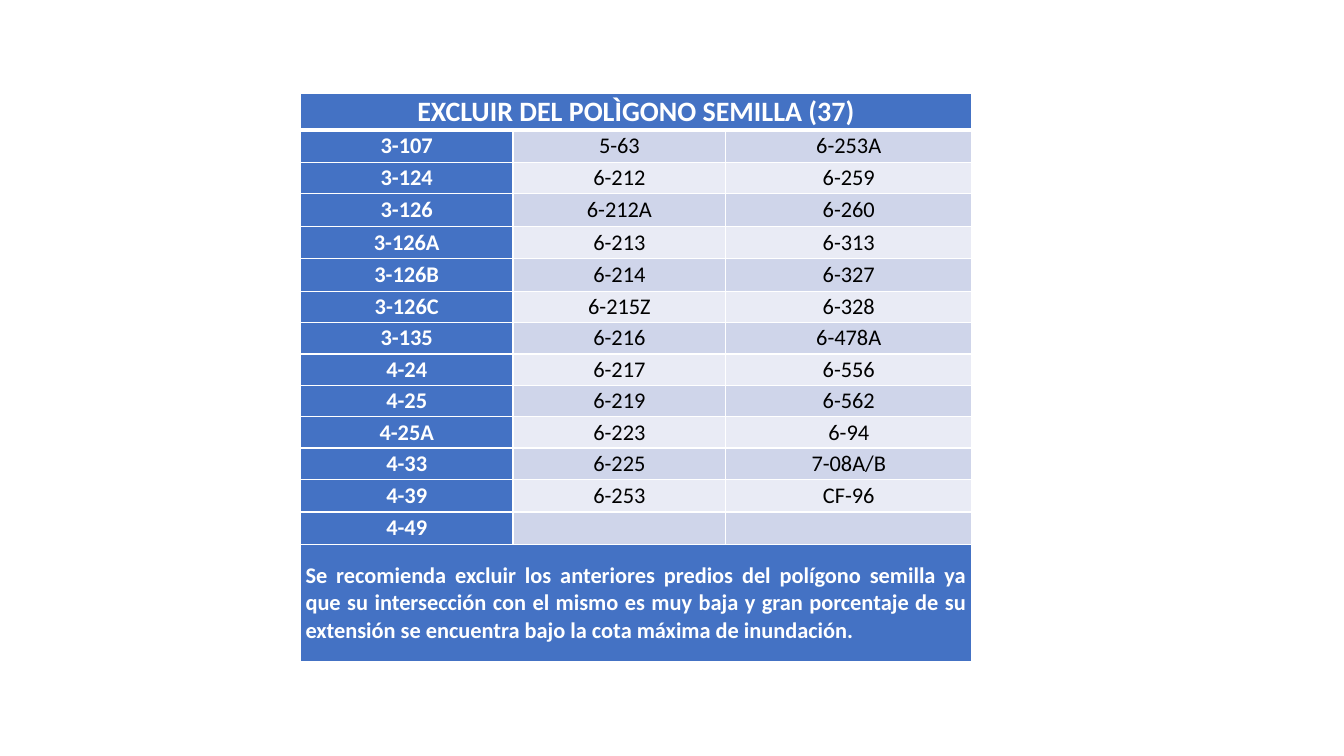
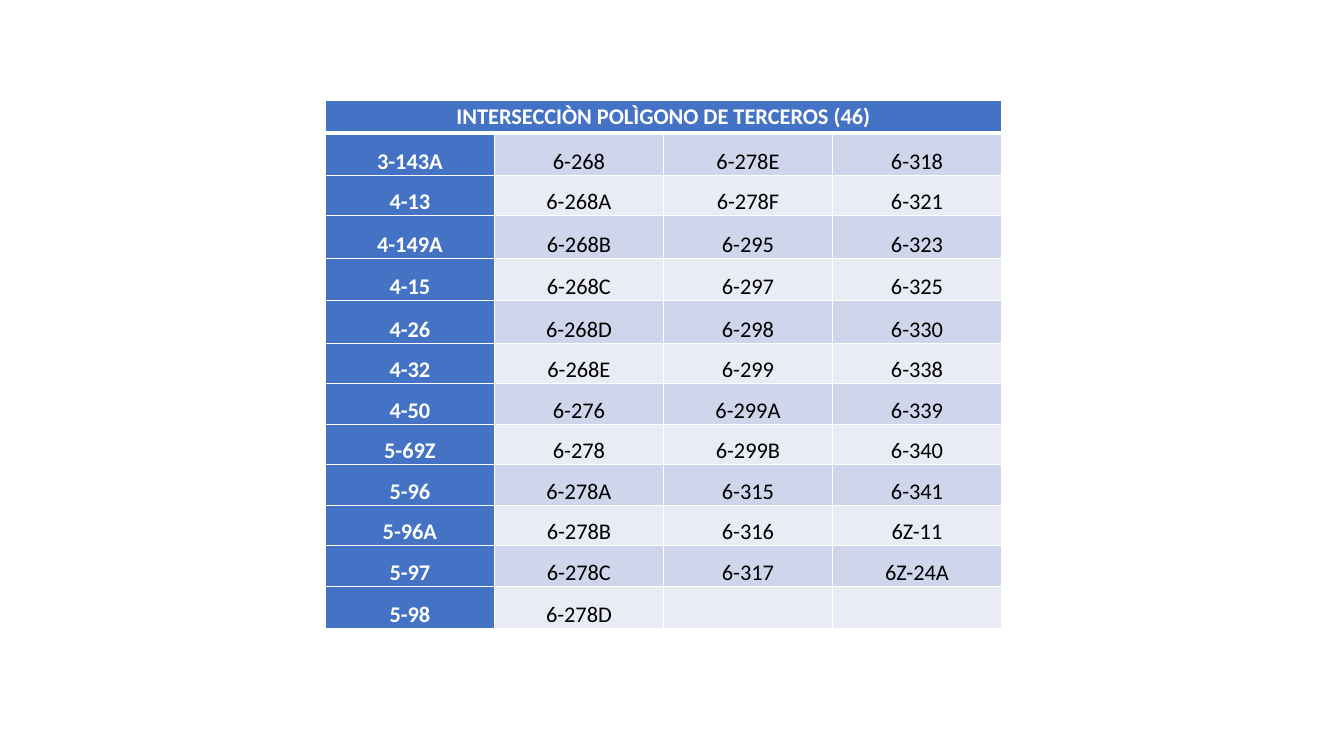
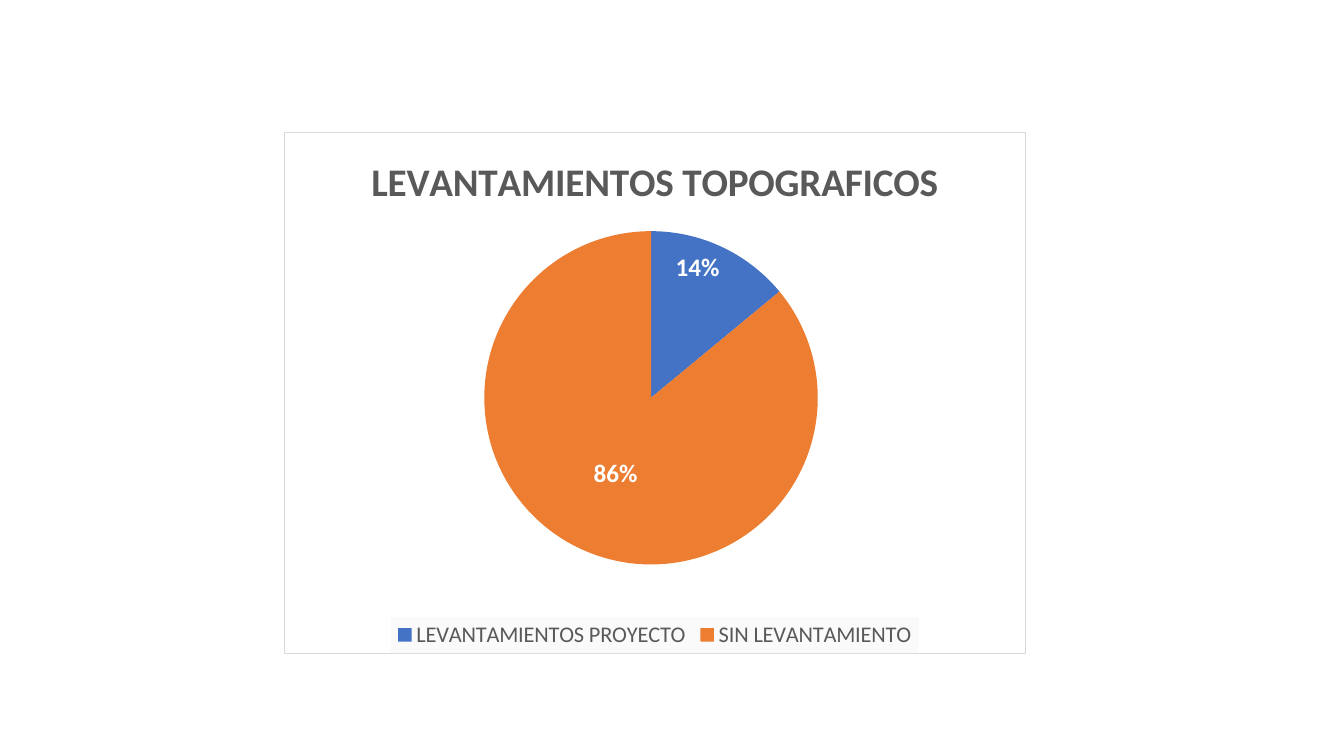
from pptx import Presentation
from pptx.chart.data import CategoryChartData
from pptx.dml.color import RGBColor
from pptx.enum.chart import XL_CHART_TYPE, XL_LABEL_POSITION, XL_LEGEND_POSITION
from pptx.enum.text import MSO_ANCHOR, PP_ALIGN
from pptx.oxml import parse_xml
from pptx.oxml.ns import nsdecls, qn
from pptx.util import Cm, Pt

PIE = XL_CHART_TYPE.PIE
INSIDE_END, LABEL_CENTER = XL_LABEL_POSITION.INSIDE_END, XL_LABEL_POSITION.CENTER
LEGEND_BOTTOM = XL_LEGEND_POSITION.BOTTOM
MIDDLE, BOTTOM = MSO_ANCHOR.MIDDLE, MSO_ANCHOR.BOTTOM
CENTER, JUSTIFY = PP_ALIGN.CENTER, PP_ALIGN.JUSTIFY

BLUE = RGBColor(0x44, 0x72, 0xC4)
ORANGE = RGBColor(0xED, 0x7D, 0x31)
BANDS = (RGBColor(0xCF, 0xD5, 0xEA), RGBColor(0xE9, 0xEB, 0xF5))
WHITE = RGBColor(0xFF, 0xFF, 0xFF)
BLACK = RGBColor(0x00, 0x00, 0x00)
GREY = RGBColor(0x59, 0x59, 0x59)
FRAME_GREY = RGBColor(0xD9, 0xD9, 0xD9)
LEGEND_GREY = RGBColor(0xFA, 0xFA, 0xFA)
FONT = "Calibri"

EXCLUDED = [
    ["3-107", "3-124", "3-126", "3-126A", "3-126B", "3-126C", "3-135",
     "4-24", "4-25", "4-25A", "4-33", "4-39", "4-49"],
    ["5-63", "6-212", "6-212A", "6-213", "6-214", "6-215Z", "6-216",
     "6-217", "6-219", "6-223", "6-225", "6-253", ""],
    ["6-253A", "6-259", "6-260", "6-313", "6-327", "6-328", "6-478A",
     "6-556", "6-562", "6-94", "7-08A/B", "CF-96", ""],
]
EXCLUDED_NOTE = (
    "Se recomienda excluir los anteriores predios del polígono semilla ya que su "
    "intersección con el mismo es muy baja y gran porcentaje de su extensión se "
    "encuentra bajo la cota máxima de inundación."
)
THIRD_PARTY = [
    ["3-143A", "4-13", "4-149A", "4-15", "4-26", "4-32",
     "4-50", "5-69Z", "5-96", "5-96A", "5-97", "5-98"],
    ["6-268", "6-268A", "6-268B", "6-268C", "6-268D", "6-268E",
     "6-276", "6-278", "6-278A", "6-278B", "6-278C", "6-278D"],
    ["6-278E", "6-278F", "6-295", "6-297", "6-298", "6-299",
     "6-299A", "6-299B", "6-315", "6-316", "6-317", ""],
    ["6-318", "6-321", "6-323", "6-325", "6-330", "6-338",
     "6-339", "6-340", "6-341", "6Z-11", "6Z-24A", ""],
]


def style_font(font, size, color, bold=False):
    font.name, font.size, font.bold = FONT, Pt(size), bold
    font.color.rgb = color


def write(frame, text, size=16, color=BLACK, bold=False, align=CENTER):
    paragraph = frame.paragraphs[0]
    paragraph.alignment = align
    if text:
        run = paragraph.add_run()
        run.text = text
        style_font(run.font, size, color, bold)


def solid_fill(color):
    return f'<a:solidFill><a:srgbClr val="{color}"/></a:solidFill>'


def set_borders(cell, top=1, bottom=1):
    widths = {"lnL": 1, "lnR": 1, "lnT": top, "lnB": bottom}
    properties = cell._tc.get_or_add_tcPr()
    for position, (side, width) in enumerate(widths.items()):
        properties.insert(position, parse_xml(
            f'<a:{side} {nsdecls("a")} w="{Pt(width)}">{solid_fill(WHITE)}</a:{side}>'))


def format_cell(cell, text, fill, anchor, top=1, bottom=1, **text_format):
    cell.margin_left = cell.margin_right = Cm(0.13)
    cell.margin_top = cell.margin_bottom = 0
    cell.vertical_anchor = anchor
    cell.fill.solid()
    cell.fill.fore_color.rgb = fill
    set_borders(cell, top, bottom)
    write(cell.text_frame, text, **text_format)


def add_lot_table(slide, left, top, widths, heights, title, lots,
                  title_size=16, anchor=MIDDLE, note=None):
    """Title row, one column per list of lots, and an optional closing note."""
    last_row, last_column = len(heights) - 1, len(widths) - 1
    table = slide.shapes.add_table(
        len(heights), len(widths), Cm(left), Cm(top),
        Cm(sum(widths)), Cm(sum(heights))).table
    table.first_row = table.horz_banding = False
    for column, width in zip(table.columns, widths):
        column.width = Cm(width)
    for row, height in zip(table.rows, heights):
        row.height = Cm(height)

    # Full-width rows
    full_rows = [(0, title, dict(size=title_size, bottom=3))]
    if note:
        full_rows.append((last_row, note, dict(align=JUSTIFY)))
    for row, text, options in full_rows:
        table.cell(row, 0).merge(table.cell(row, last_column))
        format_cell(table.cell(row, 0), text, BLUE, MIDDLE,
                    color=WHITE, bold=True, **options)

    # Lot codes
    for c, codes in enumerate(lots):
        for r, code in enumerate(codes):
            heading = c == 0
            format_cell(table.cell(r + 1, c), code,
                        BLUE if heading else BANDS[r % 2], anchor,
                        top=3 if r == 0 else 1,
                        color=WHITE if heading else BLACK, bold=heading)


def place_plot(chart, x, y, width, height):
    parts = "".join(f'<c:{tag} val="{value}"/>' for tag, value in (
        ("layoutTarget", "inner"), ("xMode", "edge"), ("yMode", "edge"),
        ("x", x), ("y", y), ("w", width), ("h", height)))
    area = chart._chartSpace.chart.plotArea
    for layout in area.findall(qn("c:layout")):
        area.remove(layout)
    area.insert(0, parse_xml(
        f'<c:layout {nsdecls("c")}><c:manualLayout>{parts}</c:manualLayout></c:layout>'))


def paint_box(element, content):
    """Give a chart part its fill or outline, ahead of its text properties."""
    element.find(qn("c:txPr")).addprevious(
        parse_xml(f'<c:spPr {nsdecls("c", "a")}>{content}</c:spPr>'))


def add_survey_pie(slide, left, top, width, height):
    data = CategoryChartData()
    data.categories = ["LEVANTAMIENTOS PROYECTO", "SIN LEVANTAMIENTO"]
    data.add_series("Series 1", (14, 86))
    chart = slide.shapes.add_chart(
        PIE, Cm(left), Cm(top), Cm(width), Cm(height), data).chart
    style_font(chart.font, 10, BLACK)

    # Title and legend
    chart.has_title = True
    write(chart.chart_title.text_frame, "LEVANTAMIENTOS TOPOGRAFICOS",
          size=28, color=GREY, bold=True)
    chart.has_legend = True
    legend = chart.legend
    legend.position = LEGEND_BOTTOM
    legend.include_in_layout = False
    style_font(legend.font, 16, GREY)
    paint_box(legend._element, solid_fill(LEGEND_GREY))

    # Frame and plot
    space = chart._chartSpace
    paint_box(space, f'{solid_fill(WHITE)}<a:ln w="{Pt(0.75)}">'
                     f'{solid_fill(FRAME_GREY)}</a:ln>')
    if space.find(qn("c:roundedCorners")) is None:
        space.chart.addprevious(
            parse_xml(f'<c:roundedCorners {nsdecls("c")} val="0"/>'))
    place_plot(chart, 0.27, 0.19, 0.45, 0.64)

    # Slices
    plot = chart.plots[0]
    plot.vary_by_categories = True
    series = plot.series[0]
    for index, color in enumerate((BLUE, ORANGE)):
        slice_format = series.points[index].format
        slice_format.fill.solid()
        slice_format.fill.fore_color.rgb = color
        slice_format.line.fill.background()

    # Percentages
    labels = series.data_labels
    labels.show_percentage, labels.show_value = True, False
    labels.number_format, labels.number_format_is_linked = "0%", False
    labels.position = INSIDE_END
    style_font(labels.font, 18, WHITE, bold=True)
    large_label = series.points[1].data_label
    large_label.position = LABEL_CENTER
    style_font(large_label.font, 18, WHITE, bold=True)
    for label in space.iter(qn("c:dLbl")):
        label.find(qn("c:showVal")).set("val", "0")
        label.find(qn("c:showPercent")).set("val", "1")


def main():
    deck = Presentation()
    deck.slide_width, deck.slide_height = Cm(33.87), Cm(19.05)
    blank = deck.slide_layouts[6]

    tall, short = 0.82, 0.79
    add_lot_table(
        deck.slides.add_slide(blank), 7.57, 2.36, [5.36, 5.36, 6.2],
        [0.91, tall, short] + [tall] * 3 + [short] * 6 + [tall] * 2 + [2.95],
        "EXCLUIR DEL POLÌGONO SEMILLA (37)", EXCLUDED,
        title_size=20, note=EXCLUDED_NOTE)

    tall, short = 1.07, 1.02
    add_lot_table(
        deck.slides.add_slide(blank), 8.2, 2.54, [4.26] * 4,
        [0.81, tall, short] + [tall] * 3 + [short] * 6 + [tall],
        "INTERSECCIÒN POLÌGONO DE TERCEROS (46)", THIRD_PARTY, anchor=BOTTOM)

    add_survey_pie(deck.slides.add_slide(blank), 7.15, 3.32, 18.7, 13.15)
    deck.save("out.pptx")


if __name__ == "__main__":
    main()
